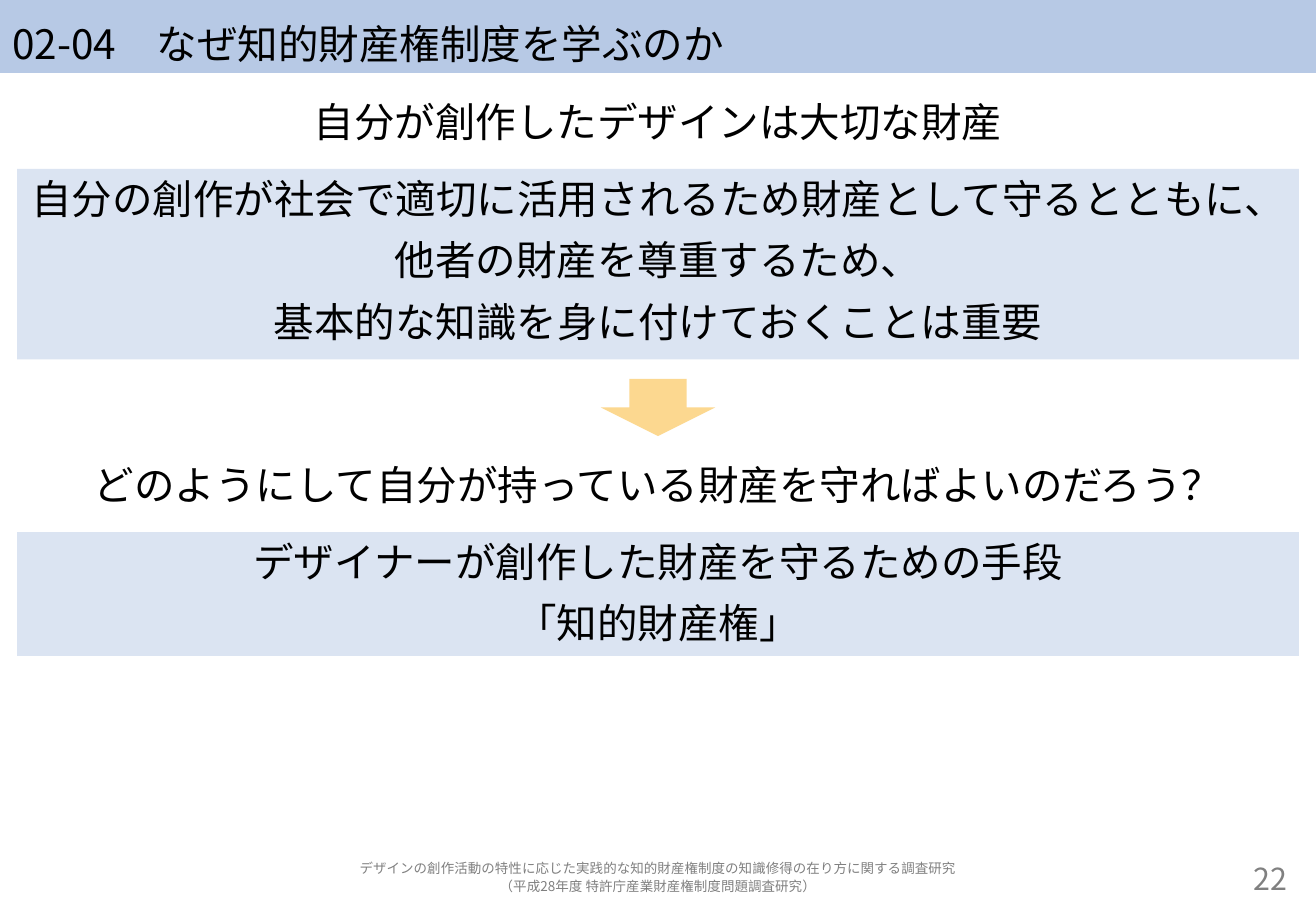
"""Build the slide on why designers study the intellectual property system."""
from lxml.etree import SubElement
from pptx import Presentation
from pptx.dml.color import RGBColor
from pptx.enum.shapes import MSO_SHAPE
from pptx.enum.text import MSO_ANCHOR, PP_ALIGN
from pptx.oxml.ns import qn
from pptx.util import Inches, Pt

FONT = "Noto Sans CJK JP"
WIDTH, HEIGHT = 10.83, 7.5
MARGIN = 0.14
CONTENT_WIDTH = WIDTH - 2 * MARGIN
LINE_RATIO = 1.32
GAP = 0.16
BLACK, GRAY = "000000", "808080"
BAND, PANEL, ARROW = "B7C9E5", "DBE4F2", "FCD890"

TITLE = "02-04　なぜ知的財産権制度を学ぶのか"
SECTIONS = [
    {
        "heading": "自分が創作したデザインは大切な財産",
        "panel": [
            "自分の創作が社会で適切に活用されるため財産として守るとともに、",
            "他者の財産を尊重するため、",
            "基本的な知識を身に付けておくことは重要",
        ],
        "panel_height": 1.57,
    },
    {
        "heading": "どのようにして自分が持っている財産を守ればよいのだろう？",
        "panel": ["デザイナーが創作した財産を守るための手段", "「知的財産権」"],
        "panel_height": 1.02,
    },
]
FOOTER = [
    "デザインの創作活動の特性に応じた実践的な知的財産権制度の知識修得の在り方に関する調査研究",
    "（平成28年度 特許庁産業財産権制度問題調査研究）",
]
PAGE_NUMBER = "22"


def color(value):
    return RGBColor.from_string(value)


def paint(shape, value):
    shape.fill.solid()
    shape.fill.fore_color.rgb = color(value)


def write(shape, lines, size=24, ink=BLACK, align=PP_ALIGN.CENTER,
          anchor=MSO_ANCHOR.TOP, before=0, insets=(0.05, 0, 0.05, 0)):
    frame = shape.text_frame
    frame.word_wrap = True
    frame.vertical_anchor = anchor
    (frame.margin_left, frame.margin_top,
     frame.margin_right, frame.margin_bottom) = map(Inches, insets)
    for index, line in enumerate(lines):
        para = frame.add_paragraph() if index else frame.paragraphs[0]
        para.alignment = align
        para.line_spacing = Pt(size * LINE_RATIO)
        para.space_before = Pt(size * before)
        span = para.add_run()
        span.text = line
        span.font.size = Pt(size)
        span.font.name = FONT
        span.font.color.rgb = color(ink)
        SubElement(span.font._element, qn("a:ea"), typeface=FONT)


def add_text(page, left, top, width, height, lines, **style):
    box = page.shapes.add_textbox(*map(Inches, (left, top, width, height)))
    write(box, lines, **style)


def add_filled(page, kind, left, top, width, height, fill):
    shape = page.shapes.add_shape(kind, *map(Inches, (left, top, width, height)))
    shape.shadow.inherit = False
    shape.line.fill.background()
    paint(shape, fill)
    return shape


def main():
    deck = Presentation()
    deck.slide_width, deck.slide_height = Inches(WIDTH), Inches(HEIGHT)
    page = deck.slides.add_slide(deck.slide_layouts[5])

    title = page.shapes.title
    title.left, title.top = 0, 0
    title.width, title.height = Inches(WIDTH), Inches(0.6)
    paint(title, BAND)
    write(title, [TITLE], align=PP_ALIGN.LEFT, anchor=MSO_ANCHOR.MIDDLE,
          insets=(0.1, 0.07, 0.1, 0))

    row_height = 0.47
    arrow_width = 0.94
    top = 0.76
    for index, section in enumerate(SECTIONS):
        if index:
            add_filled(page, MSO_SHAPE.DOWN_ARROW, (WIDTH - arrow_width) / 2, top,
                       arrow_width, row_height, ARROW)
            top += row_height + GAP
        add_text(page, MARGIN, top, CONTENT_WIDTH, row_height,
                 [section["heading"]], before=0.2)
        top += row_height + GAP
        panel = add_filled(page, MSO_SHAPE.RECTANGLE, MARGIN, top, CONTENT_WIDTH,
                           section["panel_height"], PANEL)
        write(panel, section["panel"], before=0.2)
        top += section["panel_height"] + GAP

    footer_top, footer_height, number_width = 7.06, 0.31, 1.34
    add_text(page, MARGIN, footer_top, CONTENT_WIDTH, footer_height, FOOTER,
             size=8, ink=GRAY, anchor=MSO_ANCHOR.MIDDLE)
    add_text(page, WIDTH - MARGIN - number_width, footer_top, number_width,
             footer_height, [PAGE_NUMBER], size=18, ink=GRAY,
             align=PP_ALIGN.RIGHT, anchor=MSO_ANCHOR.MIDDLE, insets=(0.1, 0, 0.1, 0))

    deck.save("out.pptx")


if __name__ == "__main__":
    main()
